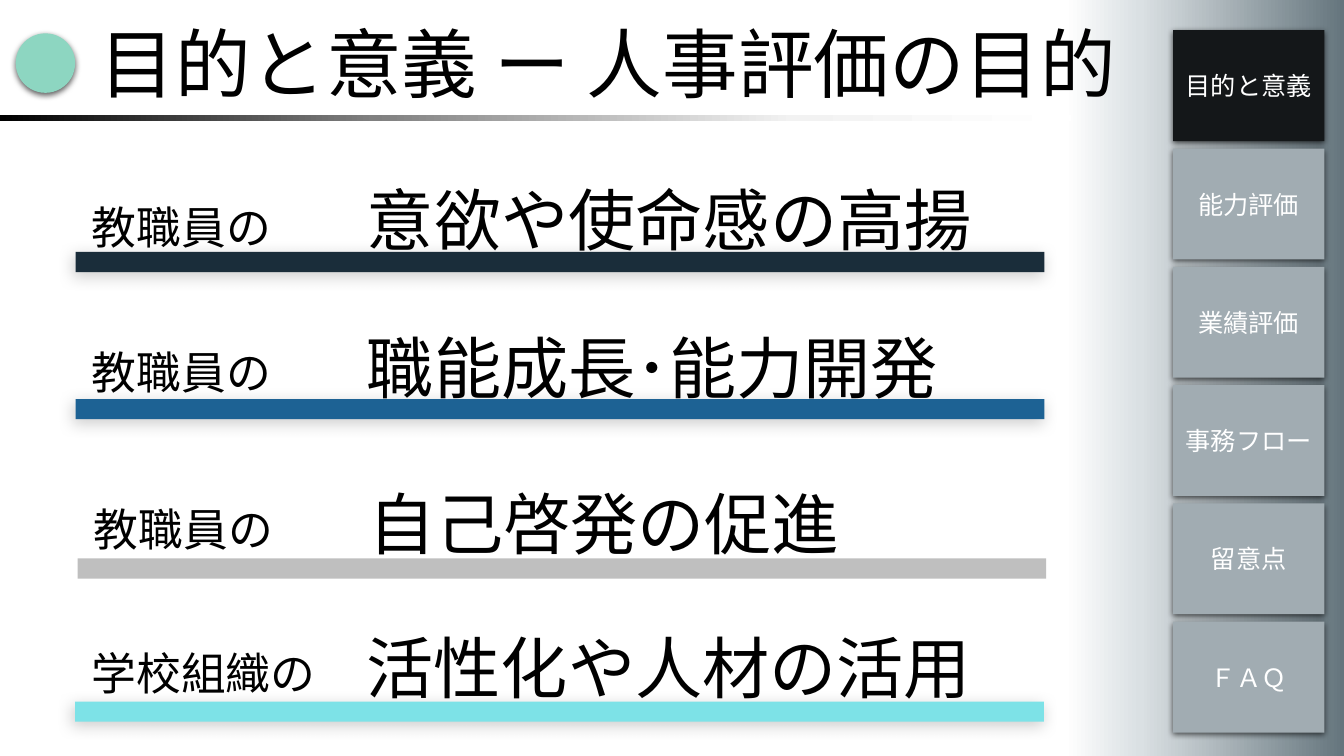
from lxml.etree import SubElement
from pptx import Presentation
from pptx.dml.color import RGBColor
from pptx.enum.shapes import MSO_SHAPE
from pptx.enum.text import MSO_ANCHOR, PP_ALIGN
from pptx.oxml.ns import qn
from pptx.util import Pt

BLACK = RGBColor(0x00, 0x00, 0x00)
WHITE = RGBColor(0xFF, 0xFF, 0xFF)
GRAY = RGBColor(0x80, 0x80, 0x80)
PALE_GRAY = RGBColor(0xF2, 0xF2, 0xF2)
SLATE = RGBColor(0x65, 0x75, 0x7D)
PALE_SLATE = RGBColor(0xDA, 0xE0, 0xE3)
ACTIVE_TAB = RGBColor(0x14, 0x17, 0x19)
IDLE_TAB = RGBColor(0xA1, 0xAC, 0xB2)
MINT = RGBColor(0x8D, 0xD6, 0xC1)
NAVY = RGBColor(0x1A, 0x2D, 0x3A)
BLUE = RGBColor(0x1D, 0x62, 0x94)
SILVER = RGBColor(0xBF, 0xBF, 0xBF)
AQUA = RGBColor(0x7D, 0xE2, 0xE7)

BODY_FONT = "Noto Sans CJK JP"
TAB_FONT = "Noto Sans CJK SC"

# Shadows: opacity %, blur, distance, direction in degrees
TIGHT_SHADOW = (63, 4.5, 1.5, 90)
WIDE_SHADOW = (20, 11, 3, 135)

TABS = ["目的と意義", "能力評価", "業績評価", "事務フロー", "留意点", "ＦＡＱ"]
TAB_PITCH = 84.5

# Owner, purpose, bar colour, bar shadow, bar left, bar top,
# and the middle heights of the owner and purpose texts
PURPOSES = [
    ("教職員の", "意欲や使命感の高揚", NAVY, WIDE_SHADOW, 54, 180, 162, 156.2),
    ("教職員の", "職能成長･能力開発", BLUE, WIDE_SHADOW, 54, 285.1, 265.7, 262.1),
    ("教職員の", "自己啓発の促進", SILVER, None, 55.4, 398.9, 377.3, 373),
    ("学校組織の", "活性化や人材の活用", AQUA, WIDE_SHADOW, 53.7, 501.1, 480.2, 475.9),
]


def add_shadow(shape, opacity, blur, distance, direction):
    effects = shape._element.spPr.find(qn("a:effectLst"))
    shadow = SubElement(
        effects, qn("a:outerShdw"), blurRad=str(Pt(blur)), dist=str(Pt(distance)),
        dir=str(direction * 60000), algn="ctr", rotWithShape="0")
    color = SubElement(shadow, qn("a:srgbClr"), val=str(BLACK))
    SubElement(color, qn("a:alpha"), val=str(opacity * 1000))


def add_shape(page, kind, left, top, width, height, color=None, shadow=None):
    shape = page.shapes.add_shape(kind, Pt(left), Pt(top), Pt(width), Pt(height))
    shape.line.fill.background()
    shape.shadow.inherit = False
    if color is not None:
        shape.fill.solid()
        shape.fill.fore_color.rgb = color
    if shadow:
        add_shadow(shape, *shadow)
    return shape


def add_gradient_band(page, left, top, width, height, stops):
    """Draw a rectangle shaded left to right through (percent, colour) stops."""
    band = add_shape(page, MSO_SHAPE.RECTANGLE, left, top, width, height)
    band.fill.gradient()
    band.fill.gradient_angle = 0
    stop_list = band._element.spPr.find(".//" + qn("a:gsLst"))
    for stop in list(stop_list):
        stop_list.remove(stop)
    for percent, color in stops:
        stop = SubElement(stop_list, qn("a:gs"), pos=str(percent * 1000))
        SubElement(stop, qn("a:srgbClr"), val=str(color))


def write_text(shape, text, size, font, color, align):
    frame = shape.text_frame
    frame.word_wrap = True
    frame.vertical_anchor = MSO_ANCHOR.MIDDLE
    paragraph = frame.paragraphs[0]
    paragraph.text = text
    paragraph.alignment = align
    paragraph.font.size = Pt(size)
    paragraph.font.color.rgb = color
    paragraph.font.name = font
    defaults = paragraph._p.find(".//" + qn("a:defRPr"))
    SubElement(defaults, qn("a:ea"), typeface=font)


def add_text(page, left, middle, width, height, text, size, inset, align):
    """Add a text box centred vertically on the height `middle`."""
    box = page.shapes.add_textbox(
        Pt(left), Pt(middle - height / 2), Pt(width), Pt(height))
    frame = box.text_frame
    frame.margin_left = frame.margin_right = Pt(inset)
    frame.margin_top = frame.margin_bottom = Pt(3.6)
    write_text(box, text, size, BODY_FONT, BLACK, align)


def add_tab(page, index, text):
    color = ACTIVE_TAB if index == 0 else IDLE_TAB
    tab = add_shape(page, MSO_SHAPE.RECTANGLE, 838, 21.6 + index * TAB_PITCH,
                    108, 79.2, color, TIGHT_SHADOW)
    write_text(tab, text, 18, TAB_FONT, WHITE, PP_ALIGN.CENTER)


def add_purpose(page, owner, purpose, color, shadow, left, bar_top,
                owner_middle, purpose_middle):
    add_text(page, left + 204.5, purpose_middle, 453.6, 70.6, purpose, 48, 3.6,
             PP_ALIGN.JUSTIFY)
    add_shape(page, MSO_SHAPE.RECTANGLE, left, bar_top, 692, 14.4, color, shadow)
    add_text(page, left + 8, owner_middle, 170, 85, owner, 32, 3.6,
             PP_ALIGN.JUSTIFY)


def main():
    deck = Presentation()
    deck.slide_width = Pt(960)
    deck.slide_height = Pt(540)
    page = deck.slides.add_slide(deck.slide_layouts[6])

    add_gradient_band(page, 760.5, 0, 199.5, 540,
                      [(0, WHITE), (27, PALE_SLATE), (100, SLATE)])
    for index, text in enumerate(TABS):
        add_tab(page, index, text)

    add_shape(page, MSO_SHAPE.OVAL, 11.2, 23.8, 42.5, 42.5, MINT, TIGHT_SHADOW)
    add_text(page, 64, 44.3, 881, 48.2, "目的と意義 ー 人事評価の目的", 54, 7.2,
             PP_ALIGN.LEFT)
    add_gradient_band(page, 0, 82.2, 765.4, 4.5,
                      [(0, BLACK), (35, GRAY), (74, PALE_GRAY), (100, WHITE)])

    for purpose in PURPOSES:
        add_purpose(page, *purpose)
    deck.save("out.pptx")


if __name__ == "__main__":
    main()
